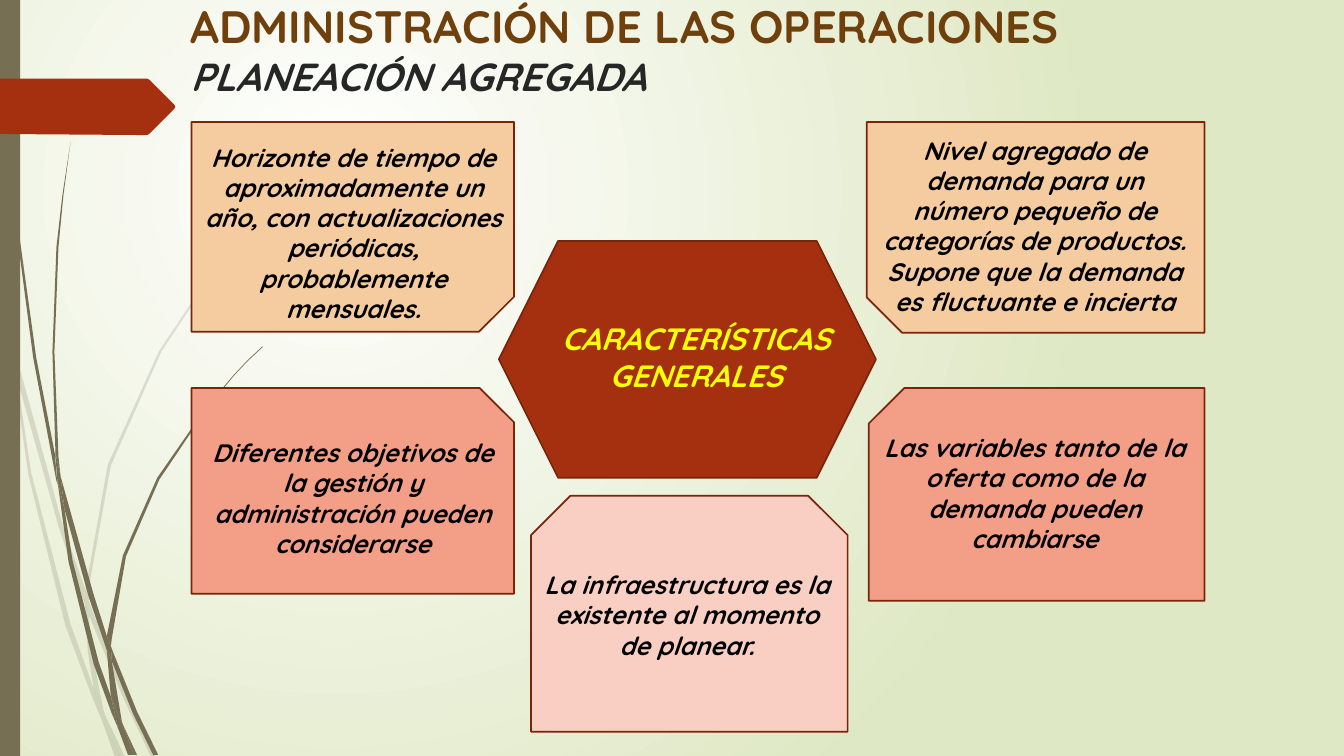
"""Build the aggregate planning slide with its five traits."""
from lxml import etree
from pptx import Presentation
from pptx import util as u
from pptx.dml.color import RGBColor
from pptx.enum import shapes, text
from pptx.oxml.ns import qn

INK = {
    "white": "FFFFFF", "lime": "DFE8C4", "olive": "766F54", "rust": "A53010",
    "edge": "7A240C", "peach": "F5CBA0", "coral": "F39E87", "blush": "F9CFC3",
    "brown": "6F3F0C", "dark": "262626", "yellow": "FFFF00", "black": "000000",
}
KIND = shapes.MSO_SHAPE
PALE = [
    (11, 350, 9, 322, 0, 282, 0, 299, 10, 344),
    (58, 522, 84, 599, 85, 586, 62, 520, 14, 345, 17, 376),
    (92, 607, 88, 596, 88, 610, 123, 694, 150, 751, 155, 751, 127, 692),
    (119, 751, 124, 751, 105, 711),
    (93, 683, 70, 619, 31, 469, 17, 376, 11, 350, 28, 470, 65, 621, 92, 693,
     101, 714, 99, 707),
    (84, 599, 87, 646, 93, 683, 96, 692, 105, 711, 103, 706, 91, 646, 88, 610,
     88, 608),
    (88, 584, 110, 462, 160, 349, 229, 245, 268, 198, 290, 175, 312, 154,
     312, 153, 289, 175, 268, 197, 228, 244, 158, 348, 107, 461, 85, 584,
     85, 586, 88, 596),
    (101, 714, 114, 751, 119, 751),
    (88, 608, 88, 610, 88, 596, 85, 586, 84, 599),
    (96, 692, 93, 683, 99, 707, 101, 714, 119, 751, 105, 711),
]
DEEP = [
    (7, 110, 17, 233, 33, 355, 56, 477, 57, 481, 55, 457, 55, 453, 36, 355,
     19, 232, 8, 109, 5, 48, 4, 0, 3, 0, 4, 48),
    (88, 592, 106, 645, 106, 631, 93, 590, 60, 472, 64, 505),
    (113, 649, 110, 641, 111, 656, 132, 708, 152, 749, 157, 749, 136, 706),
    (110, 691, 98, 657, 72, 556, 64, 505, 57, 477, 68, 557, 93, 659, 111, 708,
     117, 722, 116, 717),
    (60, 472, 58, 453, 54, 349, 58, 245, 63, 193, 70, 141, 62, 193, 56, 245,
     52, 349, 55, 449),
    (133, 749, 136, 749, 122, 719),
    (57, 477, 64, 505, 60, 472, 55, 449, 55, 453),
    (111, 633, 125, 552, 158, 476, 205, 406, 231, 374, 245, 359, 261, 344,
     260, 344, 245, 358, 231, 373, 204, 405, 156, 474, 122, 551, 106, 631,
     110, 641),
    (117, 722, 127, 749, 131, 749),
    (106, 645, 110, 691, 116, 706, 122, 719, 121, 716, 111, 656, 109, 651),
    (106, 645, 109, 651, 111, 656, 110, 641, 106, 631),
    (116, 706, 110, 691, 116, 717, 117, 722, 130, 749, 133, 749, 122, 719),
]
TAG = (173, 108, 148, 133, 146, 134, 136, 134, 0, 133, 0, 78, 146, 78,
       148, 79, 173, 104, 174, 106)
NOTES = [
    (KIND.SNIP_1_RECTANGLE, (619.2, 87.1, 241.2, 150.5), "peach", 180, False),
    (KIND.SNIP_1_RECTANGLE, (136.8, 87.1, 230.4, 149.8), "peach", 180, True),
    (KIND.SNIP_1_RECTANGLE, (136.8, 277.2, 230.4, 146.9), "coral", 0, False),
    (KIND.SNIP_1_RECTANGLE, (620.6, 277.2, 239.8, 151.9), "coral", 0, True),
    (KIND.SNIP_2_SAME_RECTANGLE, (379.4, 354.2, 226.1, 168.5), "blush", 0, False),
]
TRAITS = [
    ((133.2, 97.9, 238.3, 138.2), "Horizonte de tiempo de aproximadamente un año, "
     "con actualizaciones periódicas, probablemente mensuales."),
    ((619.2, 92.9, 239.8, 138.2), "Nivel agregado de demanda para un número pequeño "
     "de categorías de productos. Supone que la demanda es fluctuante e incierta"),
    ((380.2, 403.2, 221, 72.7),
     "La infraestructura es la existente al momento de planear."),
    ((620.6, 305.3, 236.9, 94.3),
     "Las variables tanto de la oferta como de la demanda pueden cambiarse"),
    ((136.8, 308.9, 230.4, 94.3),
     "Diferentes objetivos de la gestión y administración pueden considerarse"),
]


class Deck:
    """Hold the style and the current slide."""

    face = "Quicksand"

    def __init__(self):
        self.show = Presentation()
        self.show.slide_width, self.show.slide_height = u.Pt(960), u.Pt(540)
        self.slide = self.show.slides.add_slide(self.show.slide_layouts[6])

    def tint(self, name):
        return RGBColor.from_string(INK[name])

    def glow(self, start, end):
        fill = self.slide.background.fill
        fill.gradient()
        for pos, stop, name in zip((0, 1), fill.gradient_stops, (start, end)):
            stop.position = pos
            stop.color.rgb = self.tint(name)
        grad = self.slide.element.find(".//" + qn("a:gradFill"))
        line = grad.find(qn("a:lin"))
        ring = etree.Element(qn("a:path"), path="circle")
        etree.SubElement(ring, qn("a:fillToRect"),
                         l="50000", t="50000", r="100000", b="100000")
        grad.replace(line, ring)

    def paint(self, shape, fill, edge=None):
        shape.shadow.inherit = False
        shape.fill.solid()
        shape.fill.fore_color.rgb = self.tint(fill)
        if edge:
            shape.line.color.rgb = self.tint(edge)
            shape.line.width = u.Pt(1.25)
        else:
            shape.line.fill.background()

    def form(self, flat, fill, alpha=None):
        dots = list(zip(flat[::2], flat[1::2]))
        pen = self.slide.shapes.build_freeform(*dots[0], scale=u.Pt(0.72))
        pen.add_line_segments(dots[1:], close=True)
        shape = pen.convert_to_shape()
        self.paint(shape, fill)
        if alpha:
            tone = shape.element.spPr.find(qn("a:solidFill"))[0]
            etree.SubElement(tone, qn("a:alpha"), val=str(alpha * 1000))

    def block(self, kind, box, fill, edge=None, turn=0, flip=False):
        shape = self.slide.shapes.add_shape(kind, *map(u.Pt, box))
        self.paint(shape, fill, edge)
        shape.rotation = turn
        if flip:
            shape.element.spPr.find(qn("a:xfrm")).set("flipH", "1")

    def style(self, font, size, name, slant=True):
        font.name, font.size = self.face, u.Pt(size)
        font.bold, font.italic = True, slant
        font.color.rgb = self.tint(name)

    def frame(self, box):
        frame = self.slide.shapes.add_textbox(*map(u.Pt, box)).text_frame
        frame.word_wrap = True
        return frame

    def label(self, box, words, size=18, name="black"):
        frame = self.frame(box)
        frame.auto_size = text.MSO_AUTO_SIZE.SHAPE_TO_FIT_TEXT
        para = frame.paragraphs[0]
        para.text = words
        para.alignment = text.PP_ALIGN.CENTER
        self.style(para.font, size, name)

    def title(self, box, head, sub):
        para = self.frame(box).paragraphs[0]
        run = para.add_run()
        run.text = head
        self.style(run.font, 32.4, "brown", False)
        para.add_line_break()
        run = para.add_run()
        run.text = sub
        self.style(run.font, 27.9, "dark")


def main():
    deck = Deck()
    deck.glow("white", "lime")
    for blade in PALE:
        deck.form(blade, "olive", 20)
    for blade in DEEP:
        deck.form(blade, "olive")
    deck.block(KIND.RECTANGLE, (0, 0, 14.4, 540), "olive")
    deck.form(TAG, "rust")
    deck.block(KIND.HEXAGON, (356.4, 172.1, 269.3, 169.2), "rust", "edge")
    deck.title((128.9, -5, 702, 100.8),
               "ADMINISTRACIÓN DE LAS OPERACIONES", "PLANEACIÓN AGREGADA")
    for kind, box, fill, turn, flip in NOTES:
        deck.block(kind, box, fill, "edge", turn, flip)
    deck.label((393.1, 224.6, 208.1, 60.5), "CARACTERÍSTICAS GENERALES", 22, "yellow")
    for box, words in TRAITS:
        deck.label(box, words)
    deck.show.save("out.pptx")


if __name__ == "__main__":
    main()
